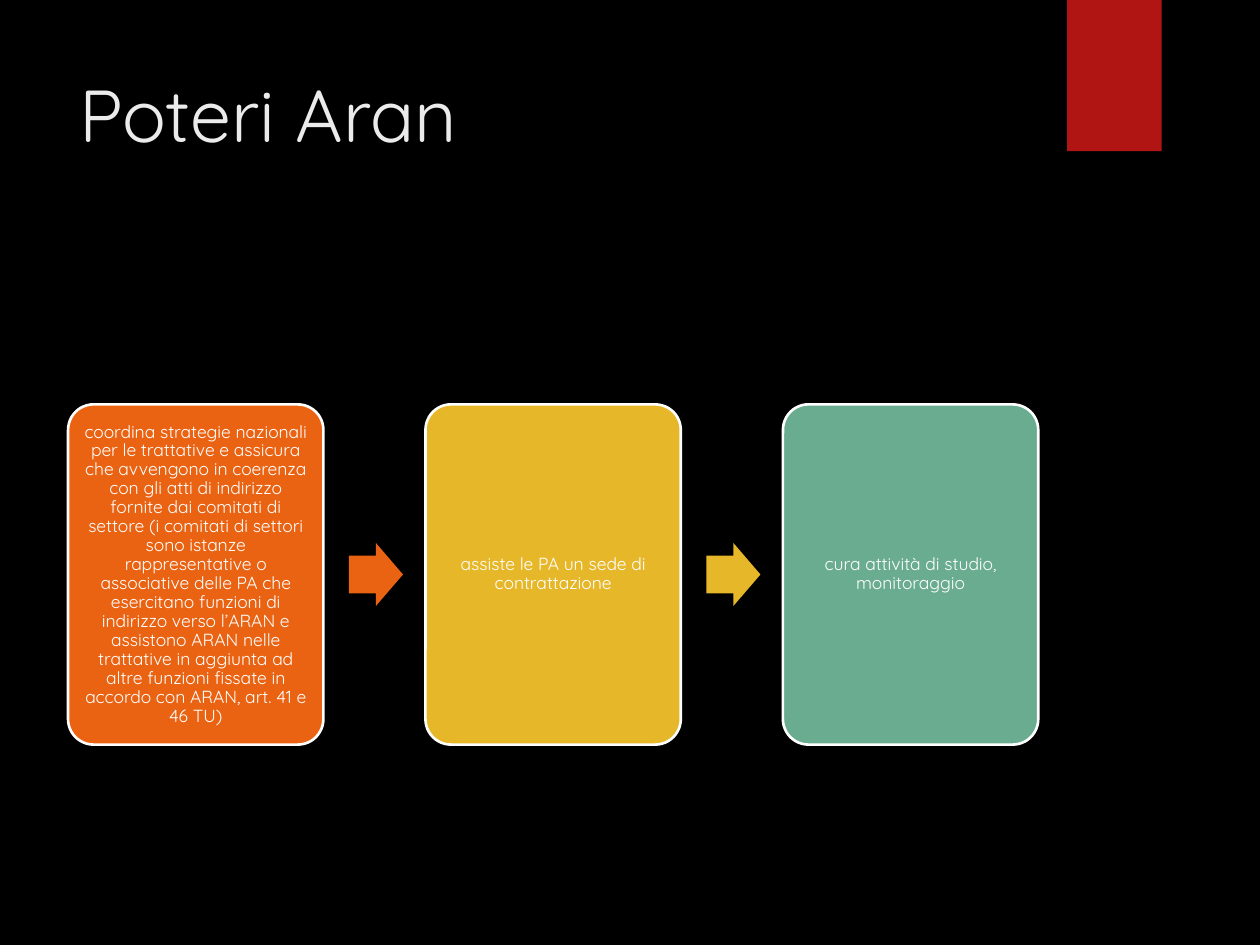
from dataclasses import dataclass

from pptx import Presentation
from pptx.dml.color import RGBColor
from pptx.enum.shapes import MSO_SHAPE
from pptx.enum.text import MSO_ANCHOR, PP_ALIGN
from pptx.util import Inches, Pt


@dataclass(frozen=True)
class Theme:
    font: str = "Quicksand"
    background: str = "000000"
    ribbon: str = "B01513"
    title: str = "EBEBEB"
    light: str = "FFFFFF"
    steps: tuple = ("EA6312", "E6B729", "6AAC90")
    title_size: int = 42
    step_size: int = 10
    outline: float = 1.5


THEME = Theme()

STEPS = (
    "coordina strategie nazionali per le trattative e assicura che avvengono "
    "in coerenza con gli atti di indirizzo fornite dai comitati di settore "
    "(i comitati di settori sono istanze rappresentative o associative delle PA "
    "che esercitano funzioni di indirizzo verso l’ARAN e assistono ARAN nelle "
    "trattative in aggiunta ad altre funzioni fissate in accordo con ARAN, "
    "art. 41 e 46 TU)",
    "assiste le PA un sede di contrattazione",
    "cura attività di studio, monitoraggio",
)


def color(value):
    return RGBColor.from_string(value)


def add_filled_shape(slide, kind, box, fill):
    shape = slide.shapes.add_shape(kind, *map(Inches, box))
    shape.shadow.inherit = False
    shape.fill.solid()
    shape.fill.fore_color.rgb = color(fill)
    shape.line.fill.background()
    return shape


def write_text(frame, text, size, ink):
    frame.word_wrap = True
    paragraph = frame.paragraphs[0]
    paragraph.text = text
    paragraph.font.name = THEME.font
    paragraph.font.size = Pt(size)
    paragraph.font.color.rgb = color(ink)
    return paragraph


def add_title(slide, box, text):
    title = slide.shapes.add_textbox(*map(Inches, box))
    write_text(title.text_frame, text, THEME.title_size, THEME.title)


def add_step(slide, box, text, fill):
    step = add_filled_shape(slide, MSO_SHAPE.ROUNDED_RECTANGLE, box, fill)
    step.adjustments[0] = 0.1
    step.line.color.rgb = color(THEME.light)
    step.line.width = Pt(THEME.outline)
    frame = step.text_frame
    frame.vertical_anchor = MSO_ANCHOR.MIDDLE
    frame.margin_left = frame.margin_right = Inches(0.06)
    frame.margin_top = frame.margin_bottom = Inches(0.04)
    paragraph = write_text(frame, text, THEME.step_size, THEME.light)
    paragraph.alignment = PP_ALIGN.CENTER
    paragraph.line_spacing = 0.9


def add_process(slide, box, texts):
    """Fill the box with equal steps, each gap 40% of a step wide and holding an arrow."""
    left, top, width, height = box
    gap_share = 0.4
    step_width = width / (len(texts) + gap_share * (len(texts) - 1))
    pitch = step_width * (1 + gap_share)
    arrow_width, arrow_height = 0.43, 0.5
    for index, (text, fill) in enumerate(zip(texts, THEME.steps)):
        step_left = left + index * pitch
        add_step(slide, (step_left, top, step_width, height), text, fill)
        if index < len(texts) - 1:
            arrow_box = (
                step_left + 1.1 * step_width,
                top + (height - arrow_height) / 2,
                arrow_width,
                arrow_height,
            )
            arrow = add_filled_shape(slide, MSO_SHAPE.RIGHT_ARROW, arrow_box, fill)
            arrow.adjustments[0] = 0.6
            arrow.adjustments[1] = 0.5


def main():
    presentation = Presentation()
    presentation.slide_width = Inches(10)
    presentation.slide_height = Inches(7.5)
    slide = presentation.slides.add_slide(presentation.slide_layouts[6])
    slide.background.fill.solid()
    slide.background.fill.fore_color.rgb = color(THEME.background)
    add_filled_shape(slide, MSO_SHAPE.RECTANGLE, (8.47, 0, 0.75, 1.2), THEME.ribbon)
    add_title(slide, (0.53, 0.5, 7.71, 1.53), "Poteri Aran")
    add_process(slide, (0.54, 3.21, 7.7, 2.7), STEPS)
    presentation.save("out.pptx")


if __name__ == "__main__":
    main()
